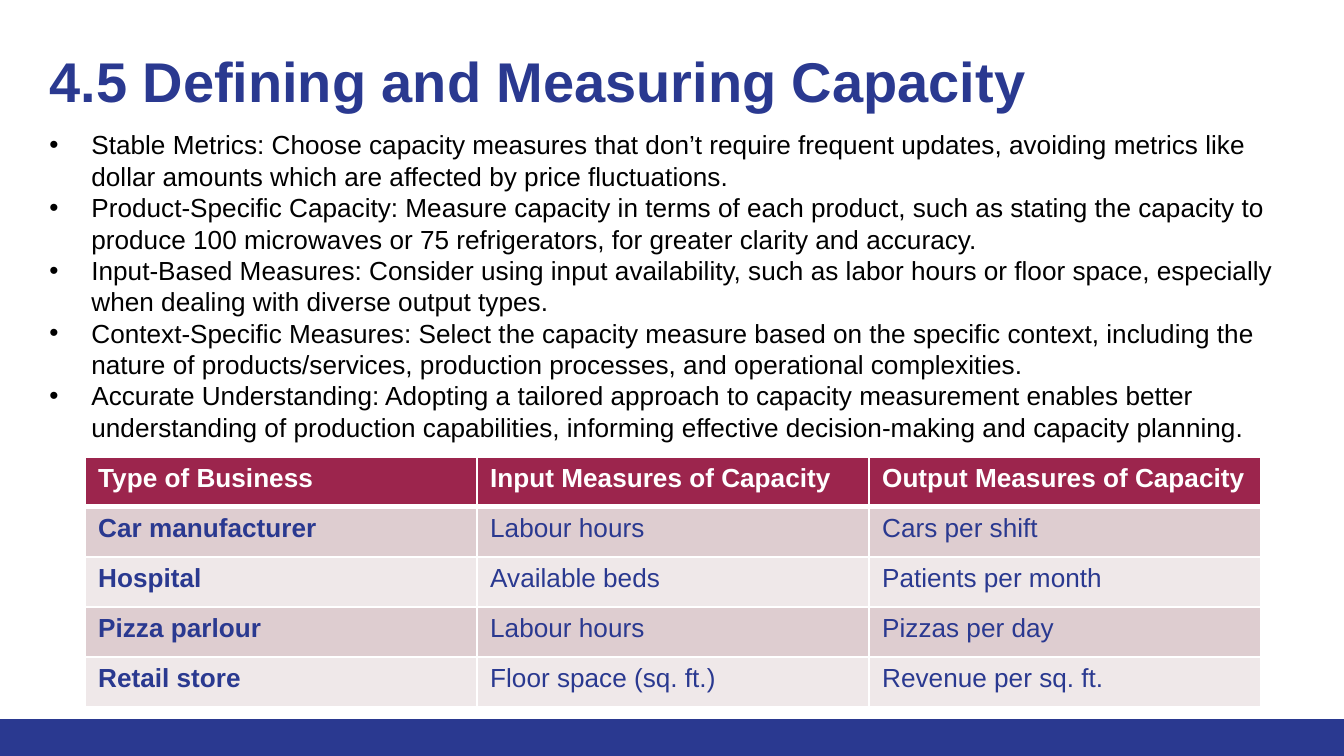
from typing import NamedTuple

from lxml.etree import SubElement
from pptx import Presentation
from pptx.dml.color import RGBColor
from pptx.enum.shapes import MSO_SHAPE as Shape
from pptx.enum.text import MSO_ANCHOR as Anchor
from pptx.oxml.ns import qn
from pptx.util import Pt

COLORS = {
    "navy": "2A3990",
    "crimson": "9C254D",
    "band_dark": "DECDD0",
    "band_light": "EFE8E9",
    "white": "FFFFFF",
    "black": "000000",
}
FONT = "Arial"
SLIDE_WIDTH, SLIDE_HEIGHT = 720, 405
BAR_TOP = 385.2
BULLET_INDENT = 22.5
ROW_HEIGHT = 26.8


class Box(NamedTuple):
    left: float
    top: float
    width: float
    height: float

    def lengths(self):
        return [Pt(value) for value in self]


class Business(NamedTuple):
    kind: str
    input_measure: str
    output_measure: str


TITLE_BOX = Box(19.4, 14.4, 662.4, 64.1)
POINTS_BOX = Box(19.4, 64.8, 681.1, 177.1)
TABLE_BOX = Box(45.4, 244.8, 630, 5 * ROW_HEIGHT)

POINTS = [
    "Stable Metrics: Choose capacity measures that don’t require frequent updates, "
    "avoiding metrics like dollar amounts which are affected by price fluctuations.",
    "Product-Specific Capacity: Measure capacity in terms of each product, such as "
    "stating the capacity to produce 100 microwaves or 75 refrigerators, for greater "
    "clarity and accuracy.",
    "Input-Based Measures: Consider using input availability, such as labor hours or "
    "floor space, especially when dealing with diverse output types.",
    "Context-Specific Measures: Select the capacity measure based on the specific "
    "context, including the nature of products/services, production processes, and "
    "operational complexities.",
    "Accurate Understanding: Adopting a tailored approach to capacity measurement "
    "enables better understanding of production capabilities, informing effective "
    "decision-making and capacity planning.",
]
HEADER = Business("Type of Business", "Input Measures of Capacity",
                  "Output Measures of Capacity")
BUSINESSES = [
    Business("Car manufacturer", "Labour hours", "Cars per shift"),
    Business("Hospital", "Available beds", "Patients per month"),
    Business("Pizza parlour", "Labour hours", "Pizzas per day"),
    Business("Retail store", "Floor space (sq. ft.)", "Revenue per sq. ft."),
]


def rgb(name: str) -> RGBColor:
    return RGBColor.from_string(COLORS[name])


def write(paragraph, text: str, *, size: float = 14, color: str = "black",
          bold: bool = False) -> None:
    run = paragraph.add_run()
    run.text = text
    run.font.name = FONT
    run.font.size = Pt(size)
    run.font.bold = bold
    run.font.color.rgb = rgb(color)


def add_text_frame(slide, box: Box, side_inset: float, top_inset: float):
    frame = slide.shapes.add_textbox(*box.lengths()).text_frame
    frame.word_wrap = True
    frame.vertical_anchor = Anchor.TOP
    frame.margin_left = frame.margin_right = Pt(side_inset)
    frame.margin_top = Pt(top_inset)
    return frame


def add_bullet(paragraph) -> None:
    properties = paragraph._p.get_or_add_pPr()
    properties.set("marL", str(Pt(BULLET_INDENT)))
    properties.set("indent", str(-Pt(BULLET_INDENT)))
    bullet_color = SubElement(properties, qn("a:buClr"))
    SubElement(bullet_color, qn("a:srgbClr"), val=COLORS["black"])
    SubElement(properties, qn("a:buFont"), typeface=FONT)
    SubElement(properties, qn("a:buChar"), char="•")


def add_borders(cell, top: float, bottom: float) -> None:
    """Draw white cell borders; call before filling, as the schema wants lines first."""
    properties = cell._tc.get_or_add_tcPr()
    for side, width in {"L": 1, "R": 1, "T": top, "B": bottom}.items():
        line = SubElement(properties, qn(f"a:ln{side}"), w=str(Pt(width)))
        fill = SubElement(line, qn("a:solidFill"))
        SubElement(fill, qn("a:srgbClr"), val=COLORS["white"])


def add_footer_bar(slide) -> None:
    box = Box(0, BAR_TOP, SLIDE_WIDTH, SLIDE_HEIGHT - BAR_TOP)
    bar = slide.shapes.add_shape(Shape.RECTANGLE, *box.lengths())
    bar.shadow.inherit = False
    bar.fill.solid()
    bar.fill.fore_color.rgb = rgb("navy")
    bar.line.fill.background()


def add_points(slide) -> None:
    frame = add_text_frame(slide, POINTS_BOX, side_inset=7.2, top_inset=4.2)
    for index, point in enumerate(POINTS):
        paragraph = frame.add_paragraph() if index else frame.paragraphs[0]
        paragraph.line_spacing = Pt(16.8)
        add_bullet(paragraph)
        write(paragraph, point)


def add_capacity_table(slide) -> None:
    rows = [HEADER, *BUSINESSES]
    table = slide.shapes.add_table(len(rows), len(HEADER), *TABLE_BOX.lengths()).table
    for row_index, business in enumerate(rows):
        is_header = row_index == 0
        band = "band_dark" if row_index % 2 else "band_light"
        for column_index, text in enumerate(business):
            cell = table.cell(row_index, column_index)
            add_borders(cell, top=3 if row_index == 1 else 1,
                        bottom=3 if is_header else 1)
            cell.fill.solid()
            cell.fill.fore_color.rgb = rgb("crimson" if is_header else band)
            write(cell.text_frame.paragraphs[0], text,
                  color="white" if is_header else "navy",
                  bold=is_header or column_index == 0)


def main() -> None:
    presentation = Presentation()
    presentation.slide_width = Pt(SLIDE_WIDTH)
    presentation.slide_height = Pt(SLIDE_HEIGHT)
    slide = presentation.slides.add_slide(presentation.slide_layouts[6])
    add_footer_bar(slide)
    title = add_text_frame(slide, TITLE_BOX, side_inset=7.2, top_inset=10.4)
    write(title.paragraphs[0], "4.5 Defining and Measuring Capacity",
          size=30, color="navy", bold=True)
    add_points(slide)
    add_capacity_table(slide)
    presentation.save("out.pptx")


if __name__ == "__main__":
    main()
